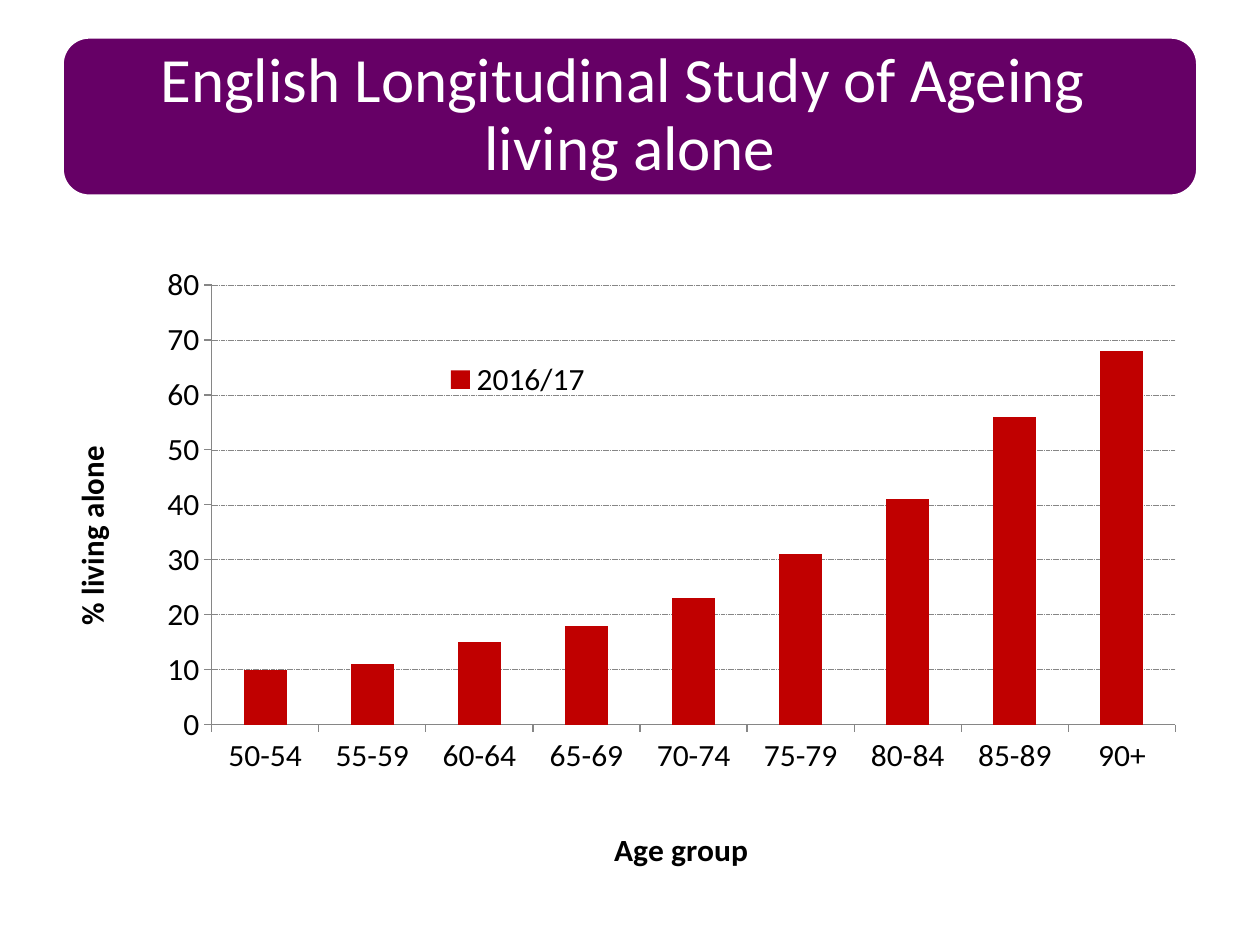
from lxml import etree
from pptx import Presentation
from pptx.chart.data import CategoryChartData
from pptx.dml.color import RGBColor
from pptx.enum.chart import XL_CHART_TYPE, XL_LEGEND_POSITION, XL_TICK_MARK
from pptx.enum.dml import MSO_LINE
from pptx.enum.shapes import MSO_SHAPE
from pptx.enum.text import MSO_ANCHOR, MSO_AUTO_SIZE, PP_ALIGN
from pptx.oxml.ns import qn
from pptx.util import Inches, Pt

PURPLE = RGBColor(0x66, 0x00, 0x66)
WHITE = RGBColor(0xFF, 0xFF, 0xFF)
BLACK = RGBColor(0x00, 0x00, 0x00)
GREY = RGBColor(0x86, 0x86, 0x86)
RED = RGBColor(0xC0, 0x00, 0x00)

COLUMNS = XL_CHART_TYPE.COLUMN_CLUSTERED
RIGHT = XL_LEGEND_POSITION.RIGHT
OUTSIDE = XL_TICK_MARK.OUTSIDE
DASH = MSO_LINE.SQUARE_DOT
ROUNDED = MSO_SHAPE.ROUNDED_RECTANGLE
MIDDLE = MSO_ANCHOR.MIDDLE
NO_AUTOFIT = MSO_AUTO_SIZE.NONE
CENTER = PP_ALIGN.CENTER

FONT = "Calibri"
TITLE = "English Longitudinal Study of Ageing \vliving alone"
AGE_GROUPS = ["50-54", "55-59", "60-64", "65-69", "70-74", "75-79", "80-84", "85-89", "90+"]
LIVING_ALONE = [10, 11, 15, 18, 23, 31, 41, 56, 68]


def apply(target, values):
    for name, value in values.items():
        setattr(target, name, value)


def format_font(font, size, color, **extra):
    apply(font, {"name": FONT, "size": Pt(size), **extra})
    font.color.rgb = color


def format_line(line, color, width):
    line.color.rgb = color
    line.width = Pt(width)


def add_banner(slide, x, y, w, h):
    sp = slide.shapes.add_shape(ROUNDED, Inches(x), Inches(y), Inches(w), Inches(h))
    sp.shadow.inherit = False
    sp.fill.solid()
    sp.fill.fore_color.rgb = PURPLE
    format_line(sp.line, WHITE, 1)


def set_title(slide, text, x, y, w, h):
    title = slide.shapes.title
    slide.shapes._spTree.append(title._element)
    apply(title, {"left": Inches(x), "top": Inches(y), "width": Inches(w), "height": Inches(h)})
    tf = title.text_frame
    tf.text = text
    sides = ("left", "top", "right", "bottom")
    apply(tf, {f"margin_{side}": Inches(0.15) for side in sides})
    apply(tf, {"word_wrap": True, "auto_size": NO_AUTOFIT, "vertical_anchor": MIDDLE})
    p = tf.paragraphs[0]
    apply(p, {"alignment": CENTER, "line_spacing": 0.9})
    format_font(p.font, 36, WHITE)
    for r in p.runs:
        format_font(r.font, 36, WHITE)


def set_layout(element, index, inner=False, **places):
    for old in element.findall(qn("c:layout")):
        element.remove(old)
    layout = etree.Element(qn("c:layout"))
    element.insert(index, layout)
    manual = etree.SubElement(layout, qn("c:manualLayout"))
    settings = {"layoutTarget": "inner"} if inner else {}
    settings.update(xMode="edge", yMode="edge", **places)
    for name, value in settings.items():
        etree.SubElement(manual, qn(f"c:{name}")).set("val", str(value))


def format_axis(axis, title, x, y):
    apply(axis, {"major_tick_mark": OUTSIDE, "has_title": True})
    format_line(axis.format.line, GREY, 0.75)
    tf = axis.axis_title.text_frame
    tf.text = title
    format_font(tf.paragraphs[0].runs[0].font, 18, BLACK, bold=True)
    set_layout(axis.axis_title._element, 1, x=x, y=y)


def add_column_chart(slide, x, y, w, h):
    data = CategoryChartData()
    data.categories = AGE_GROUPS
    data.add_series("2016/17", LIVING_ALONE)
    frame = slide.shapes.add_chart(COLUMNS, Inches(x), Inches(y), Inches(w), Inches(h), data)
    chart = frame.chart
    apply(chart, {"has_title": False, "has_legend": True})
    format_font(chart.font, 18, BLACK)

    plot = chart.plots[0]
    apply(plot, {"gap_width": 150, "vary_by_categories": False})
    fill = plot.series[0].format.fill
    fill.solid()
    fill.fore_color.rgb = RED

    format_axis(chart.category_axis, "Age group", 0.48, 0.93)
    values = chart.value_axis
    format_axis(values, "% living alone", 0, 0.31)
    apply(values, {"minimum_scale": 0, "maximum_scale": 80, "major_unit": 10})
    grid = values.major_gridlines.format.line
    format_line(grid, GREY, 0.25)
    grid.dash_style = DASH

    apply(chart.legend, {"position": RIGHT, "include_in_layout": True})
    set_layout(chart.legend._element, 1, x=0.33, y=0.17, w=0.14, h=0.07)
    plot_area = chart._chartSpace.chart.plotArea
    set_layout(plot_area, 0, inner=True, x=0.13, y=0.05, w=0.85, h=0.72)


def main():
    prs = Presentation()
    apply(prs, {"slide_width": Inches(10), "slide_height": Inches(7.5)})
    slide = prs.slides.add_slide(prs.slide_layouts[5])
    add_banner(slide, 0.5, 0.3, 9, 1.25)
    set_title(slide, TITLE, 0.56, 0.36, 8.88, 1.13)
    add_column_chart(slide, 0.51, 2.02, 9, 4.95)
    prs.save("out.pptx")


if __name__ == "__main__":
    main()
